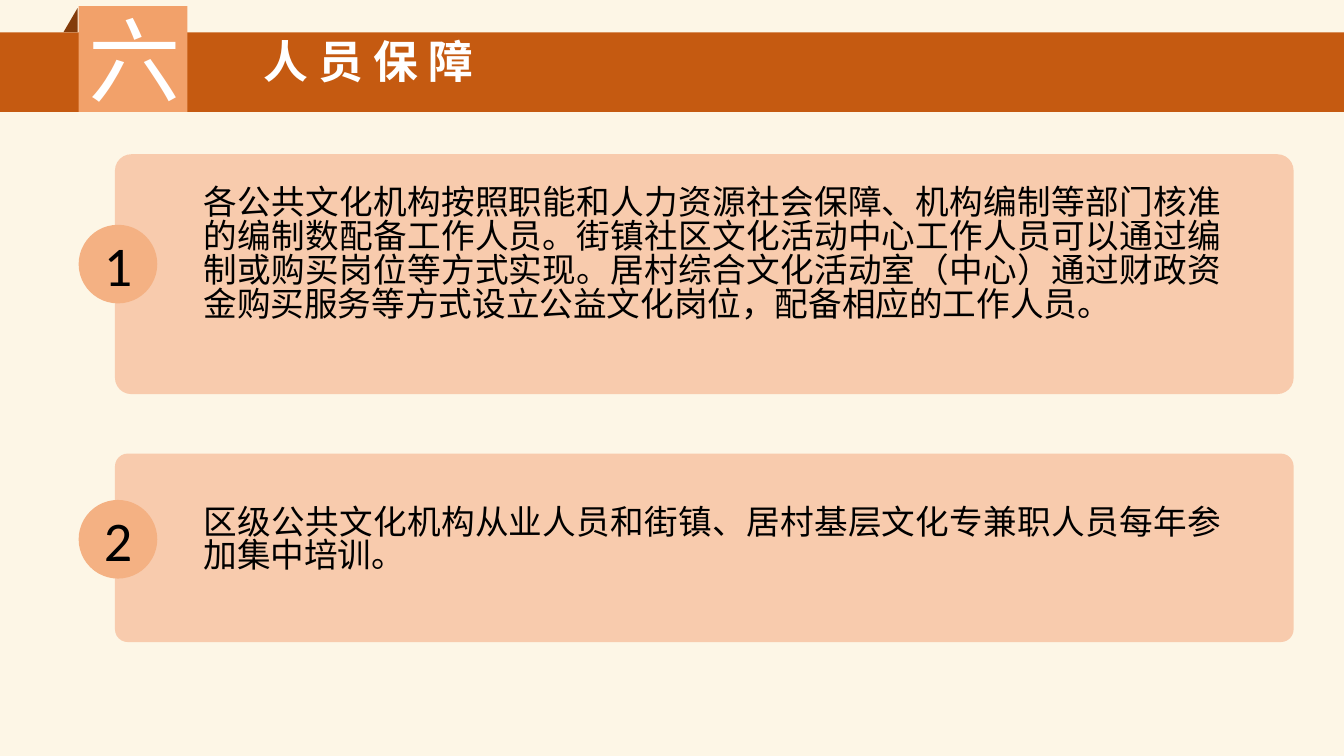
from pptx import Presentation
from pptx.dml.color import RGBColor
from pptx.enum.shapes import MSO_SHAPE
from pptx.enum.text import MSO_ANCHOR, MSO_AUTO_SIZE, PP_ALIGN
from pptx.oxml.ns import qn
from pptx.util import Inches, Pt
from lxml import etree

RECTANGLE, ROUNDED = MSO_SHAPE.RECTANGLE, MSO_SHAPE.ROUNDED_RECTANGLE
OVAL, TRIANGLE = MSO_SHAPE.OVAL, MSO_SHAPE.RIGHT_TRIANGLE
LEFT, CENTER, JUSTIFY = PP_ALIGN.LEFT, PP_ALIGN.CENTER, PP_ALIGN.JUSTIFY
TOP, MIDDLE = MSO_ANCHOR.TOP, MSO_ANCHOR.MIDDLE

SECTION = "六"
TITLE = "人 员 保 障"
# Card top, card height, text top, text height, badge top, text
CARDS = [
    (1.53, 2.38, 1.81, 1.72, 2.23,
     "各公共文化机构按照职能和人力资源社会保障、机构编制等部门核准的编制数配备工作人员。"
     "街镇社区文化活动中心工作人员可以通过编制或购买岗位等方式实现。"
     "居村综合文化活动室（中心）通过财政资金购买服务等方式设立公益文化岗位，配备相应的工作人员。"),
    (4.5, 1.87, 4.98, 0.91, 4.96,
     "区级公共文化机构从业人员和街镇、居村基层文化专兼职人员每年参加集中培训。"),
]
CARD_LEFT, CARD_WIDTH = 1.14, 11.69
TEXT_LEFT, TEXT_WIDTH = 1.92, 10.29
BADGE_LEFT, BADGE_SIZE = 0.78, 0.78

THEME = {
    "background": "FDF6E6", "band": "C55A11", "tab": "F2A16A", "fold": "843C0B",
    "card": "F8CBAD", "badge": "F4B183", "light": "FFFFFF", "dark": "000000",
    "section_size": 66, "title_size": 32, "body_size": 24, "badge_size": 40,
    "chinese": "Noto Sans CJK SC", "section_font": "Roboto", "number_font": "Calibri",
    "chinese_spacing": 0.84,
}


def color(name):
    return RGBColor.from_string(THEME[name])


def add_block(slide, kind, left, top, width, height, fill):
    shape = slide.shapes.add_shape(kind, *map(Inches, (left, top, width, height)))
    shape.shadow.inherit = False
    shape.fill.solid()
    shape.fill.fore_color.rgb = color(fill)
    shape.line.fill.background()
    return shape


def add_text_box(slide, left, top, width, height):
    return slide.shapes.add_textbox(*map(Inches, (left, top, width, height)))


def write(shape, text, size, font, ink="dark", bold=False, align=LEFT,
          anchor=TOP, wrap=True, spacing=None):
    frame = shape.text_frame
    frame.auto_size = MSO_AUTO_SIZE.NONE
    frame.word_wrap = wrap
    frame.vertical_anchor = anchor
    paragraph = frame.paragraphs[0]
    paragraph.alignment = align
    paragraph.line_spacing = spacing
    run = paragraph.add_run()
    run.text = text
    run.font.size = Pt(THEME[size])
    run.font.name = THEME[font]
    run.font.bold = bold
    run.font.color.rgb = color(ink)
    east_asian = etree.Element(qn("a:ea"), typeface=THEME[font])
    run.font._element.find(qn("a:latin")).addnext(east_asian)


def add_header(slide):
    add_block(slide, RECTANGLE, 0, 0.32, 13.33, 0.79, "band")
    add_block(slide, RECTANGLE, 0.78, 0.06, 1.08, 1.05, "tab")
    fold = add_block(slide, TRIANGLE, 0.63, 0.08, 0.14, 0.24, "fold")
    fold._element.spPr.find(qn("a:xfrm")).set("flipH", "1")
    section = add_text_box(slide, 0.78, -0.02, 0.97, 1.21)
    write(section, SECTION, "section_size", "section_font", ink="light")

    title = slide.shapes.title
    title.left, title.top, title.width, title.height = map(Inches, (2.51, 0.37, 2.4, 0.64))
    write(title, TITLE, "title_size", "chinese", ink="light", bold=True,
          wrap=False, spacing=THEME["chinese_spacing"])
    slide.shapes._spTree.append(title._element)  # bring in front of the band


def add_card(slide, number, top, height, text_top, text_height, badge_top, text):
    card = add_block(slide, ROUNDED, CARD_LEFT, top, CARD_WIDTH, height, "card")
    card.adjustments[0] = 0.068
    body = add_text_box(slide, TEXT_LEFT, text_top, TEXT_WIDTH, text_height)
    write(body, text, "body_size", "chinese", align=JUSTIFY,
          spacing=THEME["chinese_spacing"])
    badge = add_block(slide, OVAL, BADGE_LEFT, badge_top, BADGE_SIZE, BADGE_SIZE, "badge")
    write(badge, str(number), "badge_size", "number_font", align=CENTER, anchor=MIDDLE)


def main():
    presentation = Presentation()
    presentation.slide_width, presentation.slide_height = Inches(13.33), Inches(7.5)
    slide = presentation.slides.add_slide(presentation.slide_layouts.get_by_name("Title Only"))
    slide.background.fill.solid()
    slide.background.fill.fore_color.rgb = color("background")
    add_header(slide)
    for number, card in enumerate(CARDS, start=1):
        add_card(slide, number, *card)
    presentation.save("out.pptx")


if __name__ == "__main__":
    main()
